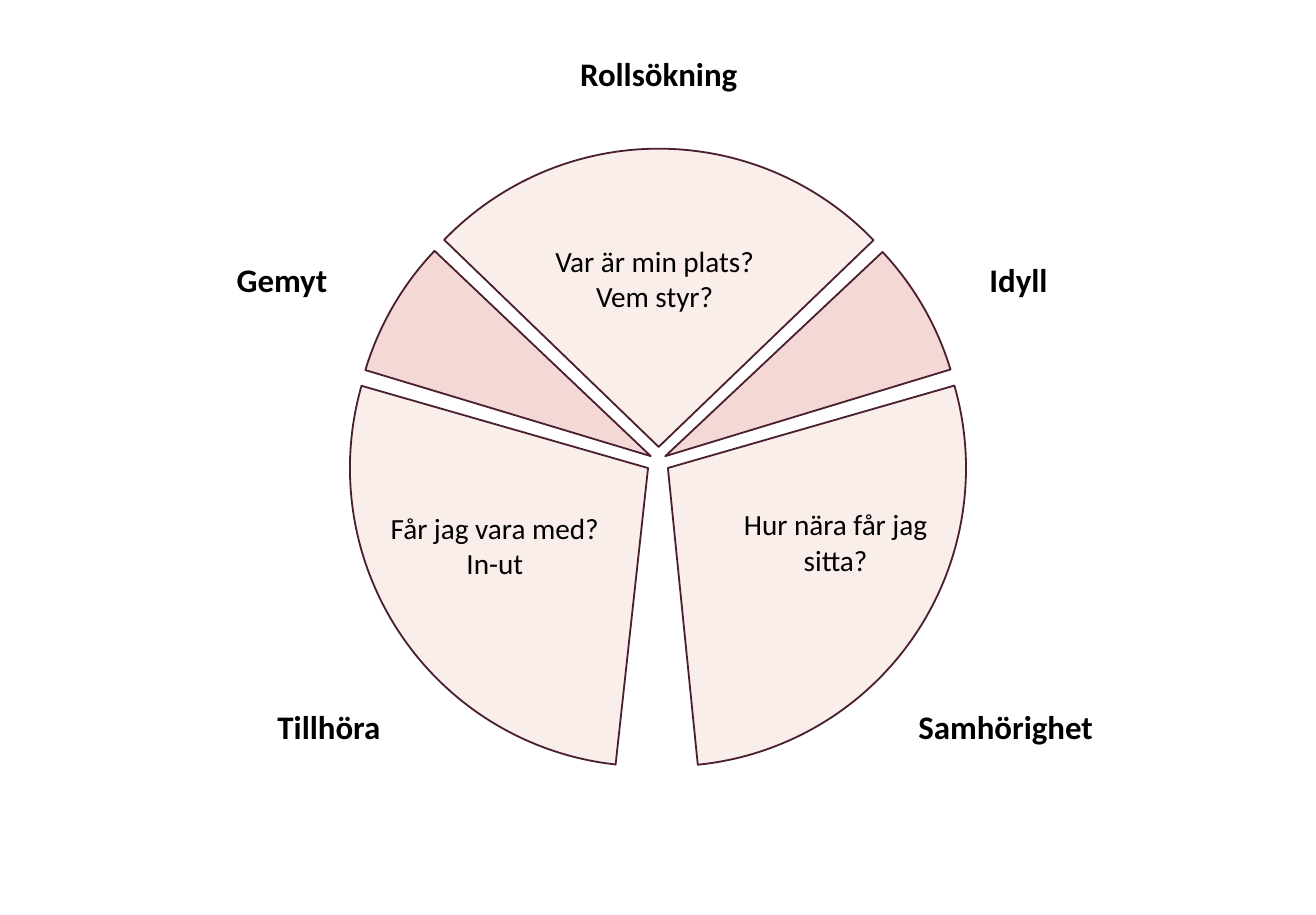
from pptx import Presentation
from pptx.util import Inches, Pt
from pptx.dml.color import RGBColor
from pptx.enum.shapes import MSO_SHAPE as Shape
from pptx.enum.text import MSO_AUTO_SIZE as Fit, PP_ALIGN as Align


def rgb(code):
    return RGBColor.from_string(code)


def write(lines, box, size, bold, align):
    """Add a text box with one paragraph per line."""
    frame = slide.shapes.add_textbox(*map(Inches, box)).text_frame
    frame.word_wrap = False
    frame.auto_size = Fit.SHAPE_TO_FIT_TEXT
    frame.text = "\n".join(lines)
    style = {"name": "Calibri", "size": Pt(size), "bold": bold}
    for para in frame.paragraphs:
        para.alignment = align
        for key, value in style.items():
            setattr(para.font, key, value)
        para.font.color.rgb = rgb("000000")


deck = Presentation()
deck.slide_width, deck.slide_height = Inches(10), Inches(6.95)
slide = deck.slides.add_slide(deck.slide_layouts[6])

PALE, PINK, EDGE = "F9EEE9", "F4D8D6", "4A1F2F"
SIDE = Inches(4.53)

# left, top, rotation, start, end, fill
wedges = [
    (2.74, 1.13, 60.9, 97.84, 153.13, PALE),
    (2.66, 1.29, 301.9, 92.6, 152.47, PALE),
    (2.81, 1.29, 176.6, 100.41, 160.59, PALE),
    (2.79, 1.2, 157, 95.87, 111.66, PINK),
    (2.68, 1.2, 39.1, 94.59, 110.63, PINK),
]
for left, top, turn, start, end, fill in wedges:
    wedge = slide.shapes.add_shape(Shape.PIE, Inches(left), Inches(top), SIDE, SIDE)
    wedge.rotation = turn
    wedge.adjustments[0], wedge.adjustments[1] = start, end
    wedge.shadow.inherit = False
    wedge.fill.solid()
    wedge.fill.fore_color.rgb = rgb(fill)
    wedge.line.color.rgb = rgb(EDGE)
    wedge.line.width = Pt(1)

asks = [
    (["Var är min plats?", "Vem styr?"], (4.06, 1.8, 1.83, 0.64)),
    (["Får jag vara med?", "In-ut"], (2.74, 3.83, 2.04, 0.64)),
    (["Hur nära får jag", "sitta?"], (5.52, 3.8, 1.66, 0.64)),
]
for lines, box in asks:
    write(lines, box, 16, False, Align.CENTER)

stages = [
    ("Rollsökning", 4.31, 0.36, 1.4),
    ("Idyll", 7.42, 1.92, 0.65),
    ("Gemyt", 1.7, 1.92, 0.9),
    ("Samhörighet", 6.88, 5.32, 1.54),
    ("Tillhöra", 2.01, 5.32, 0.99),
]
for name, left, top, width in stages:
    write([name], (left, top, width, 0.4), 18, True, Align.LEFT)

deck.save("out.pptx")
